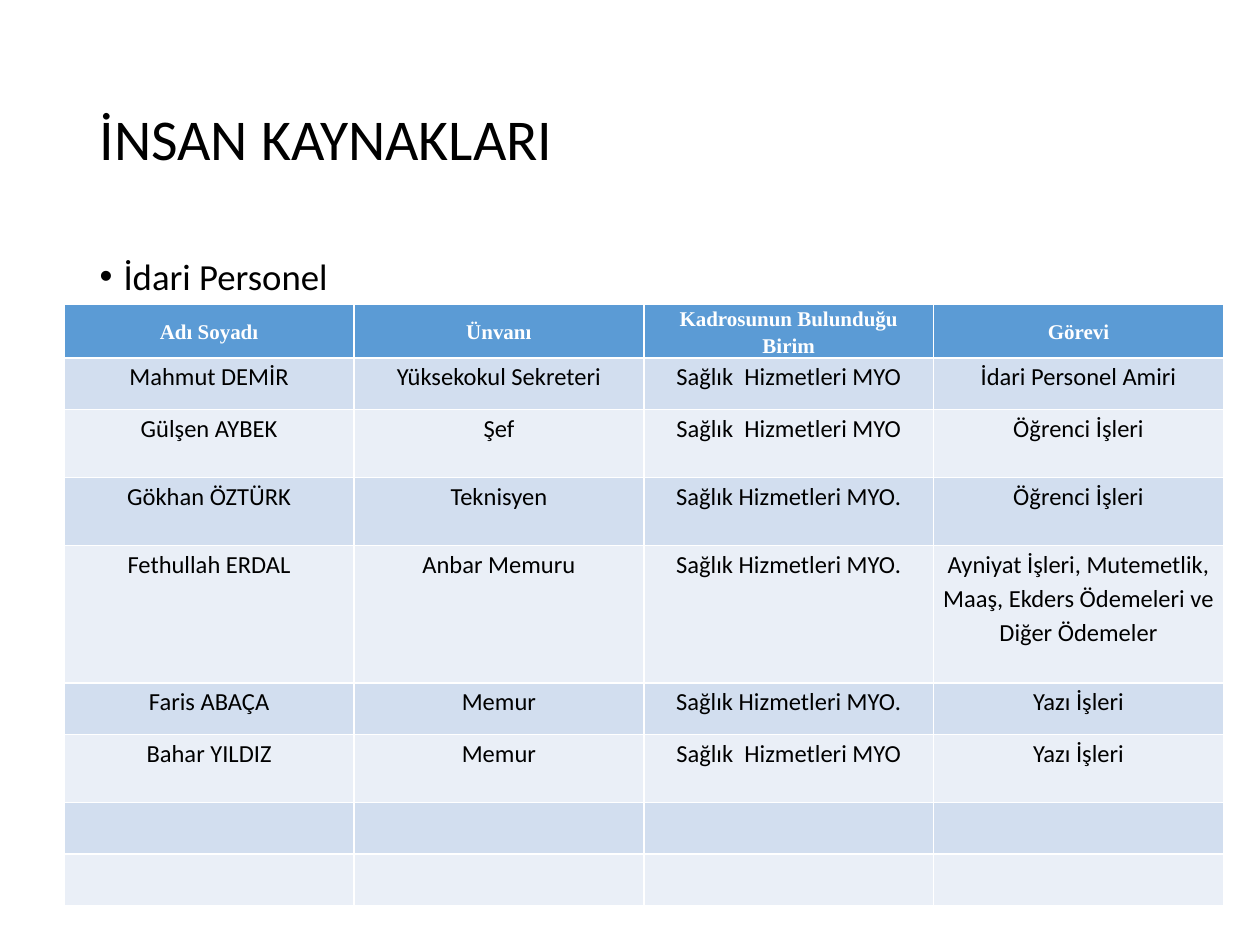
import dataclasses

import pptx
import pptx.dml.color
import pptx.enum.text
import pptx.util

RGBColor = pptx.dml.color.RGBColor
BLACK = RGBColor(0x00, 0x00, 0x00)
WHITE = RGBColor(0xFF, 0xFF, 0xFF)
HEADER_BLUE = RGBColor(0x5B, 0x9B, 0xD5)
BANDS = (RGBColor(0xD2, 0xDE, 0xEF), RGBColor(0xEA, 0xEF, 0xF7))

SLIDE_W = pptx.util.Inches(10)
SLIDE_H = pptx.util.Inches(7.5)
COLUMN_W = pptx.util.Inches(2.3)
ANCHOR = pptx.enum.text.MSO_ANCHOR
ALIGN = pptx.enum.text.PP_ALIGN


@dataclasses.dataclass(frozen=True)
class TextStyle:
    size: float
    color: RGBColor = BLACK
    name: str = "Calibri"
    bold: bool = False


@dataclasses.dataclass(frozen=True)
class StaffRow:
    height: float
    cells: tuple[str, ...] = ("", "", "", "")


TITLE = TextStyle(33)
LIST = TextStyle(21)
HEADER = TextStyle(12, WHITE, "Times New Roman", True)
BODY = TextStyle(14)

UNIT = "Sağlık  Hizmetleri MYO"
UNIT_DOTTED = "Sağlık Hizmetleri MYO."
ROWS = (
    StaffRow(0.41, ("Adı Soyadı", "Ünvanı", "Kadrosunun Bulunduğu Birim", "Görevi")),
    StaffRow(0.41, ("Mahmut DEMİR", "Yüksekokul Sekreteri", UNIT, "İdari Personel Amiri")),
    StaffRow(0.54, ("Gülşen AYBEK", "Şef", UNIT, "Öğrenci İşleri")),
    StaffRow(0.54, ("Gökhan ÖZTÜRK", "Teknisyen", UNIT_DOTTED, "Öğrenci İşleri")),
    StaffRow(1.09, ("Fethullah ERDAL", "Anbar Memuru", UNIT_DOTTED,
                    "Ayniyat İşleri, Mutemetlik, Maaş, Ekders Ödemeleri ve Diğer Ödemeler")),
    StaffRow(0.41, ("Faris ABAÇA", "Memur", UNIT_DOTTED, "Yazı İşleri")),
    StaffRow(0.54, ("Bahar YILDIZ", "Memur", UNIT, "Yazı İşleri")),
    StaffRow(0.41),
    StaffRow(0.41),
)


def style_paragraph(p, style: TextStyle, align, spacing: float) -> None:
    p.alignment = align
    p.line_spacing = spacing
    p.font.size = pptx.util.Pt(style.size)
    p.font.name = style.name
    p.font.bold = style.bold
    p.font.color.rgb = style.color


def fill_placeholder(sp, text: str, style: TextStyle, top: float, height: float):
    sp.left, sp.width = round(SLIDE_W * 0.069), round(SLIDE_W * 0.862)
    sp.top, sp.height = round(SLIDE_H * top), round(SLIDE_H * height)
    sp.text_frame.text = text
    p = sp.text_frame.paragraphs[0]
    style_paragraph(p, style, ALIGN.LEFT, 0.9)
    return p


def fill_cell(cell, text: str, style: TextStyle, color: RGBColor) -> None:
    cell.fill.solid()
    cell.fill.fore_color.rgb = color
    if not text:
        return
    cell.margin_left = cell.margin_right = pptx.util.Inches(0.07)
    cell.margin_top = cell.margin_bottom = 0
    cell.text = text
    style_paragraph(cell.text_frame.paragraphs[0], style, ALIGN.CENTER, 1.15)


def add_staff_table(slide, rows: tuple[StaffRow, ...]) -> None:
    columns = len(rows[0].cells)
    height = pptx.util.Inches(sum(row.height for row in rows))
    table = slide.shapes.add_table(
        len(rows), columns, round(SLIDE_W * 0.051), round(SLIDE_H * 0.322),
        COLUMN_W * columns, height).table
    for i, row in enumerate(rows):
        table.rows[i].height = pptx.util.Inches(row.height)
        style = BODY if i else HEADER
        color = BANDS[(i - 1) % 2] if i else HEADER_BLUE
        for j, text in enumerate(row.cells):
            fill_cell(table.cell(i, j), text, style, color)
    for j in (0, 1, 3):
        table.cell(0, j).vertical_anchor = ANCHOR.MIDDLE


def main() -> None:
    prs = pptx.Presentation()
    prs.slide_width, prs.slide_height = SLIDE_W, SLIDE_H
    slide = prs.slides.add_slide(prs.slide_layouts[1])

    title = slide.shapes.title
    fill_placeholder(title, "İNSAN KAYNAKLARI", TITLE, 0.053, 0.193)
    title.text_frame.vertical_anchor = ANCHOR.MIDDLE

    p = fill_placeholder(slide.placeholders[1], "İdari Personel", LIST, 0.267, 0.635)
    p.space_before = pptx.util.Pt(7.5)
    pPr = p._p.get_or_add_pPr()
    indent = pptx.util.Inches(0.19)
    pPr.set("marL", str(indent))
    pPr.set("indent", str(-indent))

    add_staff_table(slide, ROWS)
    prs.save("out.pptx")


if __name__ == "__main__":
    main()
